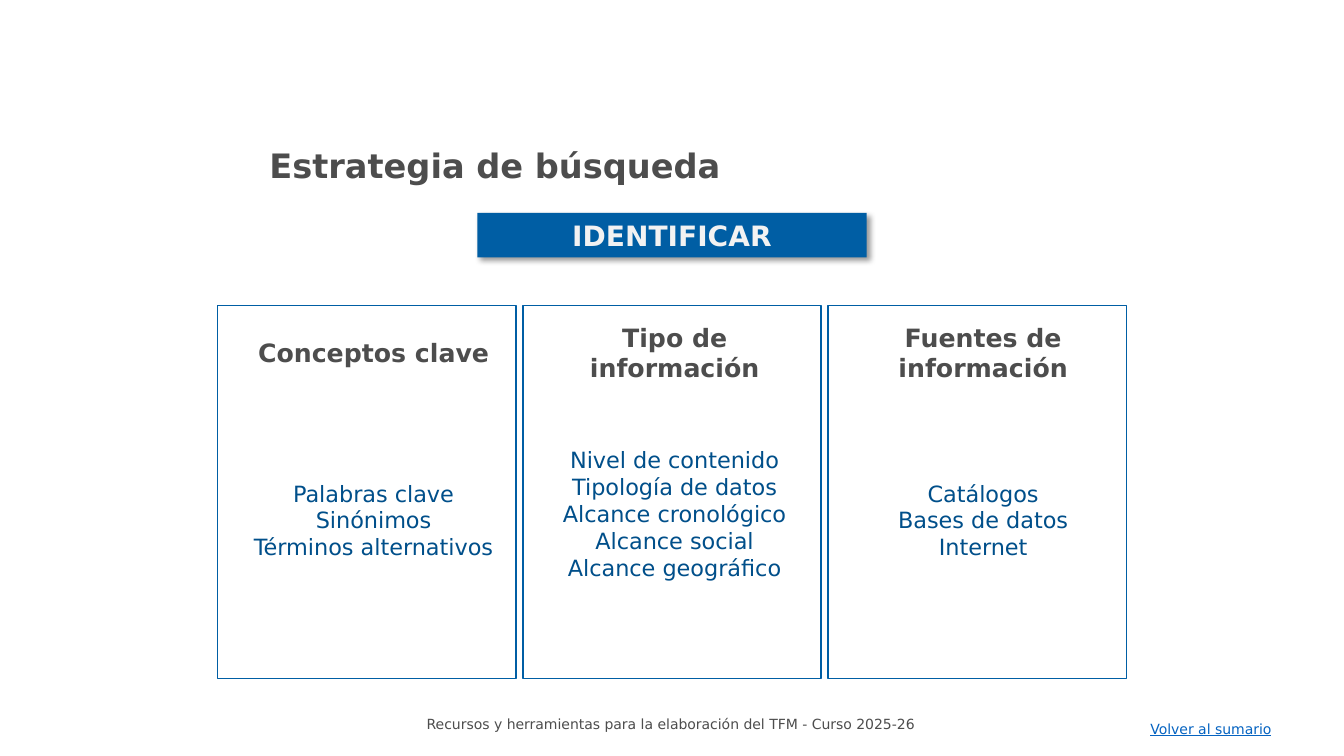
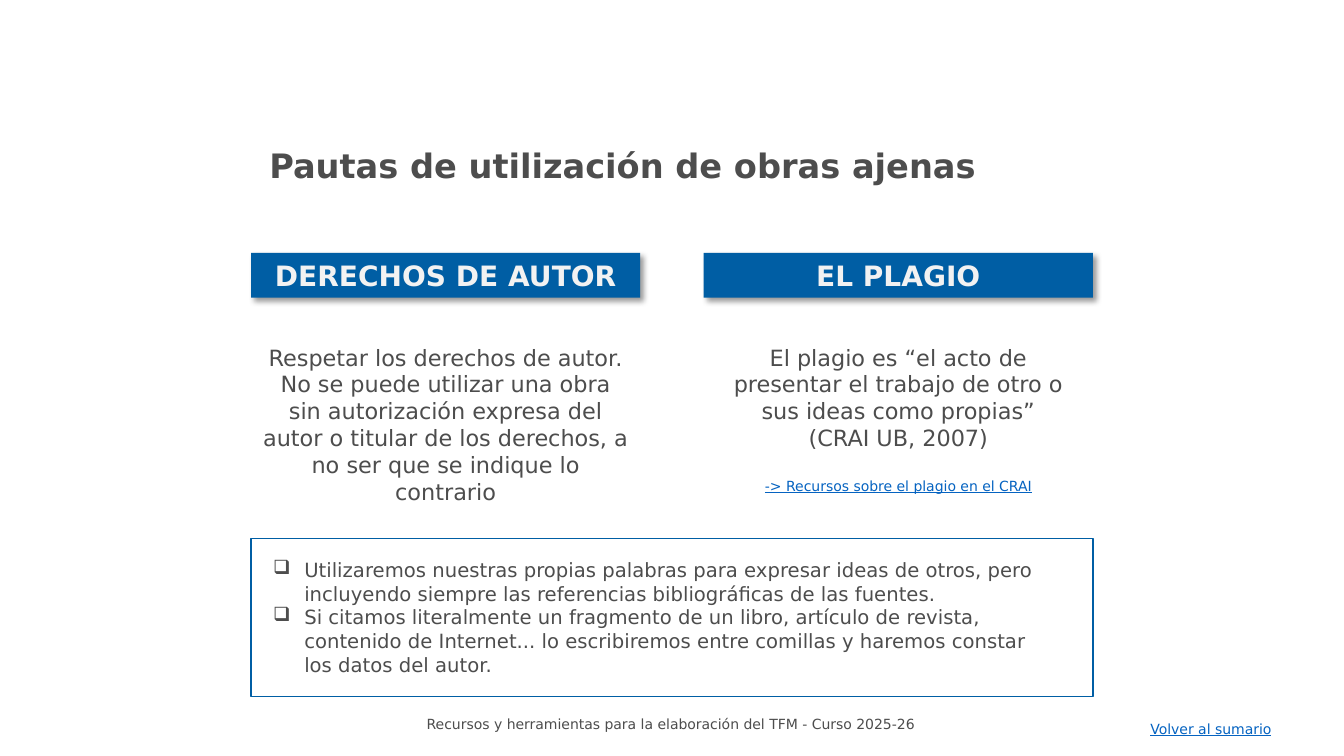
from lxml import etree
from pptx import Presentation
from pptx.dml.color import RGBColor
from pptx.enum.shapes import MSO_SHAPE
from pptx.enum.text import MSO_ANCHOR, PP_ALIGN
from pptx.oxml.ns import qn
from pptx.util import Inches, Pt

RECT = MSO_SHAPE.RECTANGLE
TOP, MIDDLE = MSO_ANCHOR.TOP, MSO_ANCHOR.MIDDLE
LEFT, CENTER = PP_ALIGN.LEFT, PP_ALIGN.CENTER

FONT = "DejaVu Sans"
GREY = RGBColor(0x4D, 0x4D, 0x4D)
BLUE = RGBColor(0x00, 0x5E, 0xA4)
DARK_BLUE = RGBColor(0x00, 0x4F, 0x8A)
LINK = RGBColor(0x05, 0x63, 0xC1)
PALE = RGBColor(0xF2, 0xF2, 0xF2)

BANNER_W, BANNER_H = 28.96, 5.9
FOOTER = "Recursos y herramientas para la elaboración del TFM - Curso 2025-26"


class Deck:
    def __init__(self):
        self.prs = Presentation()
        self.prs.slide_width = Inches(13.33)
        self.prs.slide_height = Inches(7.5)
        self.s = None

    def box(self, x, y, w, h):
        col, row = self.prs.slide_width / 100, self.prs.slide_height / 100
        return int(x * col), int(y * row), int(w * col), int(h * row)

    def slide(self, title):
        self.s = self.prs.slides.add_slide(self.prs.slide_layouts[6])
        self.text(20.1, 94, 59.6, 3.6, [FOOTER], 10)
        tf = self.text(84.85, 94.67, 10.8, 3.6, ["Volver al sumario"], 10, LINK, align=LEFT)
        tf.word_wrap = False
        self.underline(tf.paragraphs[0])
        self.text(19.3, 18.5, 62.6, 6.7, [title], 24, bold=True, align=LEFT)

    def style(self, p, size, color, bold=False, align=CENTER):
        p.alignment = align
        for r in p.runs:
            r.font.name = FONT
            r.font.size = Pt(size)
            r.font.bold = bold
            r.font.color.rgb = color

    def underline(self, p):
        for r in p.runs:
            r.font.underline = True

    def fill_text(self, tf, lines, size, color, bold=False, align=CENTER, anchor=TOP):
        tf.word_wrap = True
        tf.vertical_anchor = anchor
        tf.text = "\n".join(lines)
        for p in tf.paragraphs:
            self.style(p, size, color, bold, align)
        return tf

    def text(self, x, y, w, h, lines, size, color=GREY, bold=False, align=CENTER):
        sp = self.s.shapes.add_textbox(*self.box(x, y, w, h))
        return self.fill_text(sp.text_frame, lines, size, color, bold, align)

    def frame(self, x, y, w, h):
        sp = self.s.shapes.add_shape(RECT, *self.box(x, y, w, h))
        sp.shadow.inherit = False
        sp.fill.background()
        sp.line.color.rgb = BLUE
        sp.line.width = Pt(1)

    def banner(self, x, y, label):
        sp = self.s.shapes.add_shape(RECT, *self.box(x, y, BANNER_W, BANNER_H))
        sp.shadow.inherit = False
        sp.fill.solid()
        sp.fill.fore_color.rgb = BLUE
        sp.line.fill.background()
        effects = sp._element.spPr.find(qn("a:effectLst"))
        shadow = etree.SubElement(effects, qn("a:outerShdw"), blurRad=str(Pt(4)),
                                  dist=str(Pt(3)), dir="2700000", algn="tl")
        black = etree.SubElement(shadow, qn("a:srgbClr"), val="000000")
        etree.SubElement(black, qn("a:alpha"), val="40000")
        self.fill_text(sp.text_frame, [label], 20, PALE, True, anchor=MIDDLE)

    def bullets(self, x, y, w, h, items, size):
        tf = self.text(x, y, w, h, items, size, align=LEFT)
        indent = Inches(0.31)
        for p in tf.paragraphs:
            pPr = p._p.get_or_add_pPr()
            pPr.set("marL", str(indent))
            pPr.set("indent", str(-indent))
            etree.SubElement(pPr, qn("a:buChar"), char="❑")


def search_strategy(deck):
    deck.slide("Estrategia de búsqueda")
    deck.banner((100 - BANNER_W) / 2, 28.15, "IDENTIFICAR")
    cards = [
        (17.75, 44, "Conceptos clave", 62.8,
         ["Palabras clave", "Sinónimos", "Términos alternativos"]),
        (40.15, 42, "Tipo de información", 58.4,
         ["Nivel de contenido", "Tipología de datos", "Alcance cronológico",
          "Alcance social", "Alcance geográfico"]),
        (63.1, 42, "Fuentes de información", 62.8,
         ["Catálogos", "Bases de datos", "Internet"]),
    ]
    for i, (x, head_y, head, list_y, lines) in enumerate(cards):
        deck.text(x, head_y, 20.1, 9.4, [head], 18, bold=True)
        deck.text(x, list_y, 20.1, 19.7, lines, 16, DARK_BLUE)
        deck.frame(16.2 + i * 22.7, 40.4, 22.2, 49.33)


def use_of_works(deck):
    deck.slide("Pautas de utilización de obras ajenas")
    columns = [
        (18.68, "DERECHOS DE AUTOR",
         ["Respetar los derechos de autor. No se puede utilizar una obra sin autorización "
          "expresa del autor o titular de los derechos, a no ser que se indique lo contrario"]),
        (52.36, "EL PLAGIO",
         ["El plagio es “el acto de presentar el trabajo de otro o sus ideas como propias”",
          "(CRAI UB, 2007)", "-> Recursos sobre el plagio en el CRAI"]),
    ]
    for x, label, lines in columns:
        deck.banner(x, 33.47, label)
        tf = deck.text(x, 44.8, BANNER_W, 25, lines, 16)
    link = tf.paragraphs[-1]
    deck.style(link, 10, LINK)
    deck.underline(link)
    link.space_before = Pt(19)

    deck.frame(18.68, 71.2, 62.64, 20.93)
    deck.bullets(19.58, 73.2, 60.84, 17.07, [
        "Utilizaremos nuestras propias palabras para expresar ideas de otros, pero "
        "incluyendo siempre las referencias bibliográficas de las fuentes.",
        "Si citamos literalmente un fragmento de un libro, artículo de revista, contenido "
        "de Internet... lo escribiremos entre comillas y haremos constar\vlos datos del autor.",
    ], 14)


def main():
    deck = Deck()
    search_strategy(deck)
    use_of_works(deck)
    deck.prs.save("out.pptx")


if __name__ == "__main__":
    main()
